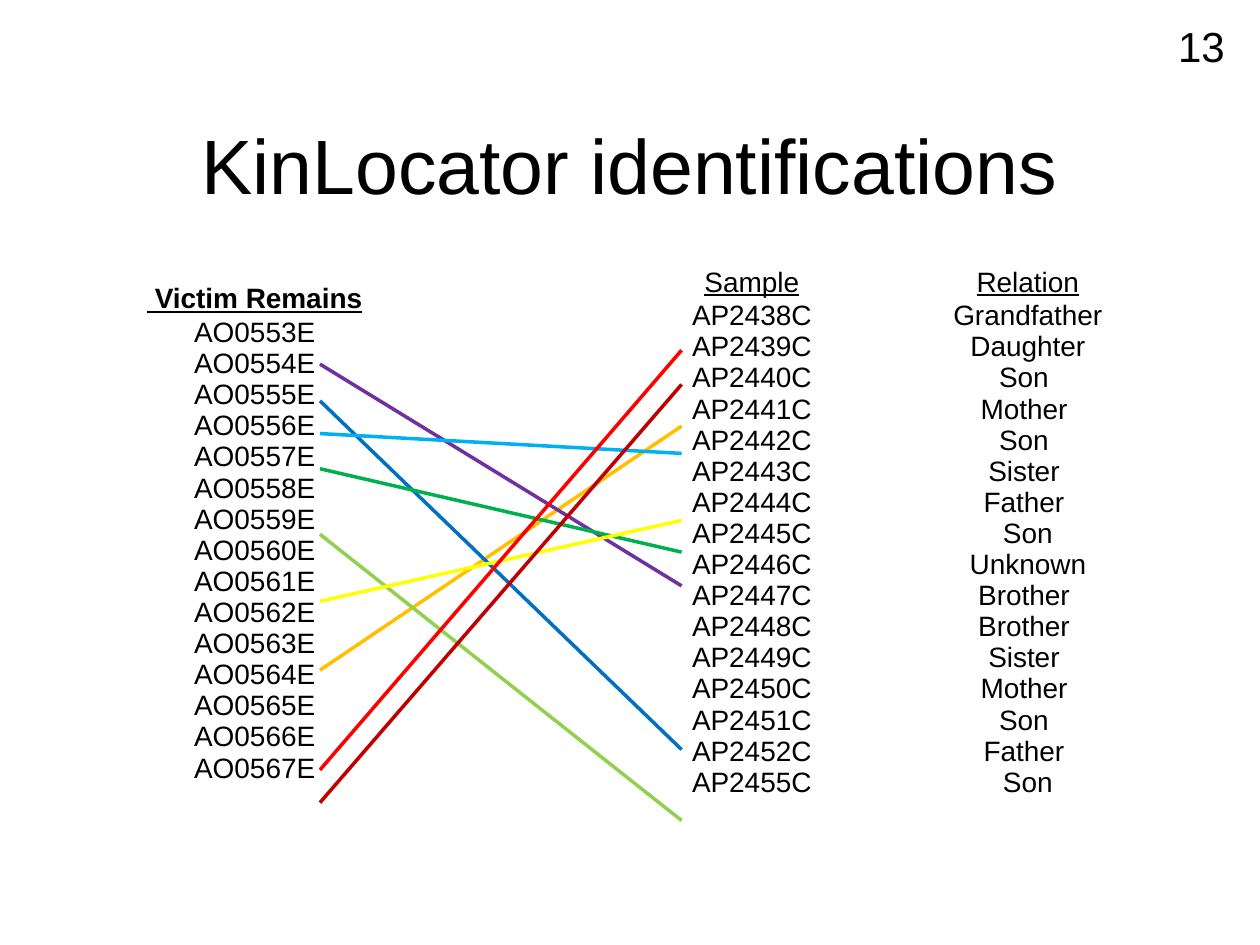
import pptx
import pptx.dml.color
import pptx.enum.shapes
import pptx.enum.text
import pptx.oxml.ns
import pptx.util
from lxml import etree
from pptx.util import Cm

COLORS = {
    "text": "000000", "background": "FFFFFF",
    "amber": "FFC000", "purple": "7030A0", "blue": "0070C0",
    "sky": "00B0F0", "green": "00B050", "lime": "92D050",
    "yellow": "FFFF00", "red": "FF0000", "dark red": "C00000",
}
CENTER = pptx.enum.text.PP_ALIGN.CENTER
RIGHT = pptx.enum.text.PP_ALIGN.RIGHT


def rgb(name):
    return pptx.dml.color.RGBColor.from_string(COLORS[name])


def write_lines(text_frame, text, size=16, align=CENTER, bold=False, underline=False):
    """Fill the frame with one paragraph for each line of text."""
    for index, line in enumerate(text.split("\n")):
        paragraph = text_frame.paragraphs[0] if index == 0 else text_frame.add_paragraph()
        paragraph.alignment = align
        run = paragraph.add_run()
        run.text = line
        run.font.name = "Arial"
        run.font.size = pptx.util.Pt(size)
        run.font.bold = bold
        run.font.underline = underline
        run.font.color.rgb = rgb("text")


presentation = pptx.Presentation()
presentation.slide_width = Cm(25.4)
presentation.slide_height = Cm(19.05)
slide = presentation.slides.add_slide(presentation.slide_layouts[5])

# Title and page number
title = slide.shapes.title
title.left, title.top, title.width, title.height = Cm(1.9), Cm(1.7), Cm(21.59), Cm(3.18)
title.text_frame.vertical_anchor = pptx.enum.text.MSO_ANCHOR.MIDDLE
write_lines(title.text_frame, "KinLocator identifications", size=44)

page_number = slide.shapes.add_textbox(Cm(22.73), Cm(0.28), Cm(2.21), Cm(1.17))
page_number.text_frame.word_wrap = True
write_lines(page_number.text_frame, "13", size=24, align=RIGHT)

# Tables: a header row above one tall cell per column
victims = [f"AO{number:04}E" for number in range(553, 568)]
samples = [f"AP{number}C" for number in [*range(2438, 2453), 2455]]
relations = [
    "Grandfather", "Daughter", "Son ", "Mother ", "Son ", "Sister ", "Father ", "Son",
    "Unknown", "Brother ", "Brother ", "Sister ", "Mother ", "Son ", "Father ", "Son",
]
# left, top, height, bold header, columns of (header, width, lines)
tables = [
    (2.29, 5.72, 11.5, True, [(" Victim Remains", 5.69, victims)]),
    (12.83, 5.38, 12.2, False, [("Sample", 4.65, samples), ("Relation", 6.48, relations)]),
]
header_height = 0.63
for left, top, height, bold_header, columns in tables:
    total_width = sum(width for _, width, _ in columns)
    table = slide.shapes.add_table(
        2, len(columns), Cm(left), Cm(top), Cm(total_width), Cm(height)).table
    table.first_row = False
    table.horz_banding = False
    table.rows[0].height = Cm(header_height)
    table.rows[1].height = Cm(height - header_height)
    for column, (header, width, lines) in enumerate(columns):
        table.columns[column].width = Cm(width)
        for row, text in enumerate([header, "\n".join(lines)]):
            cell = table.cell(row, column)
            cell.margin_left = cell.margin_right = Cm(0.18)
            cell.margin_top = cell.margin_bottom = 0
            cell.fill.solid()
            cell.fill.fore_color.rgb = rgb("background")
            is_header = row == 0
            write_lines(cell.text_frame, text, bold=is_header and bold_header,
                        underline=is_header)
            # Cell borders stay invisible
            properties = cell._tc.get_or_add_tcPr()
            for index, side in enumerate(["lnL", "lnR", "lnT", "lnB"]):
                border = etree.Element(pptx.oxml.ns.qn(f"a:{side}"), w="0")
                etree.SubElement(border, pptx.oxml.ns.qn("a:noFill"))
                properties.insert(index, border)

# Matches from victim remains to family samples: colour, start height, end height
matches = [
    ("amber", 13.51, 8.59), ("purple", 7.34, 11.81), ("blue", 8.08, 15.11),
    ("sky", 8.74, 9.14), ("green", 9.45, 11.13), ("lime", 10.77, 16.54),
    ("yellow", 12.12, 10.49), ("red", 15.52, 7.06), ("dark red", 16.18, 7.75),
]
for color, start, end in matches:
    connector = slide.shapes.add_connector(
        pptx.enum.shapes.MSO_CONNECTOR.STRAIGHT, Cm(6.45), Cm(start), Cm(13.74), Cm(end))
    connector.line.color.rgb = rgb(color)
    connector.line.width = pptx.util.Pt(2)
    etree.SubElement(connector._element.spPr, pptx.oxml.ns.qn("a:effectLst"))

presentation.save("out.pptx")
